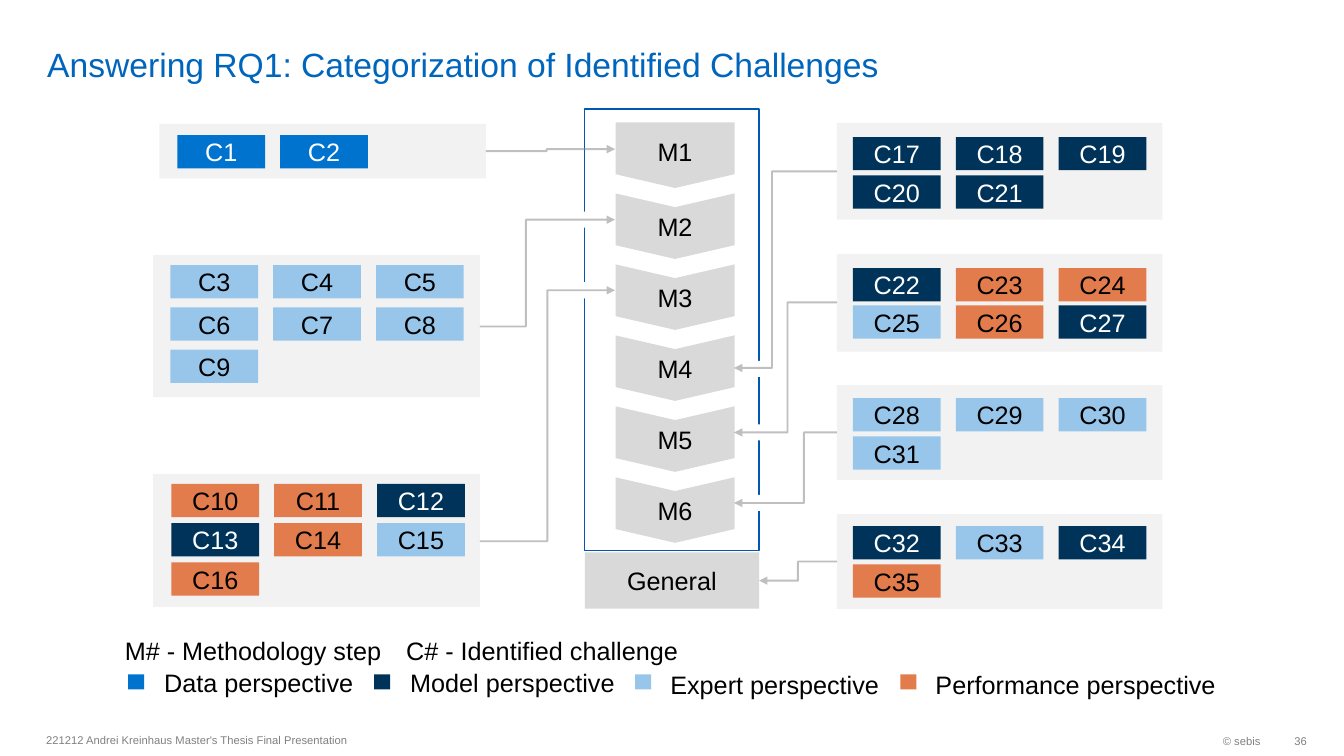
"""Build the slide that maps identified challenges to methodology steps."""
from dataclasses import dataclass

from lxml import etree
from pptx import Presentation
from pptx.dml.color import RGBColor
from pptx.enum.shapes import MSO_CONNECTOR, MSO_SHAPE
from pptx.enum.text import MSO_ANCHOR, PP_ALIGN
from pptx.oxml.ns import qn
from pptx.shapes.autoshape import Shape
from pptx.slide import Slide
from pptx.text.text import TextFrame
from pptx.util import Inches, Pt

RECT, PENTAGON, CHEVRON = MSO_SHAPE.RECTANGLE, MSO_SHAPE.PENTAGON, MSO_SHAPE.CHEVRON
ELBOW = MSO_CONNECTOR.ELBOW
LEFT, CENTER, RIGHT = PP_ALIGN.LEFT, PP_ALIGN.CENTER, PP_ALIGN.RIGHT
TOP, MIDDLE, BOTTOM = MSO_ANCHOR.TOP, MSO_ANCHOR.MIDDLE, MSO_ANCHOR.BOTTOM

WHITE = RGBColor(0xFF, 0xFF, 0xFF)
BLACK = RGBColor(0x00, 0x00, 0x00)
TITLE_BLUE = RGBColor(0x00, 0x65, 0xBD)
FRAME_BLUE = RGBColor(0x00, 0x58, 0xB2)
GRAY = RGBColor(0x80, 0x80, 0x80)
STEP_GRAY = RGBColor(0xD9, 0xD9, 0xD9)
PANEL_GRAY = RGBColor(0xF2, 0xF2, 0xF2)
BLUE = RGBColor(0x00, 0x73, 0xCF)
NAVY = RGBColor(0x00, 0x33, 0x59)
SKY = RGBColor(0x98, 0xC6, 0xEA)
ORANGE = RGBColor(0xE3, 0x7C, 0x4D)

FONT = "Arial"
CHIP_W, CHIP_H, CHIP_PITCH, COLUMNS = 0.87, 0.33, 1.02, 3
STEP_W, STEP_H, STEP_COUNT = 0.65, 1.18, 6
FIRST_STEP_TOP, LAST_STEP_TOP = 0.95, 4.47


@dataclass(frozen=True)
class Perspective:
    fill: RGBColor
    color: RGBColor


@dataclass(frozen=True)
class Panel:
    left: float
    top: float
    width: float
    height: float
    chip_left: float
    chip_top: float
    row_pitch: float
    first: int
    codes: str


@dataclass(frozen=True)
class Link:
    x1: float
    y1: float
    x2: float
    y2: float
    bend: float


@dataclass(frozen=True)
class Label:
    text: str
    left: float
    top: float
    width: float
    height: float = 0.38
    size: int = 18
    color: RGBColor = BLACK
    align: PP_ALIGN = LEFT
    anchor: MSO_ANCHOR = TOP
    wrap: bool = False
    inset: float = 0.05


PERSPECTIVES = {
    "D": Perspective(BLUE, WHITE),
    "M": Perspective(NAVY, WHITE),
    "E": Perspective(SKY, BLACK),
    "P": Perspective(ORANGE, BLACK),
}
PANELS = [
    Panel(1.58, 1.23, 3.24, 0.54, 1.76, 1.34, 0, 1, "DD"),
    Panel(1.52, 2.53, 3.24, 1.41, 1.69, 2.63, 0.42, 3, "EEEEEEE"),
    Panel(1.52, 4.7, 3.24, 1.32, 1.7, 4.8, 0.39, 10, "PPMMPEP"),
    Panel(8.3, 1.22, 3.23, 0.96, 8.46, 1.36, 0.38, 17, "MMMMM"),
    Panel(8.3, 2.52, 3.23, 0.97, 8.46, 2.66, 0.37, 22, "MPPEPM"),
    Panel(8.3, 3.82, 3.23, 0.94, 8.46, 3.95, 0.38, 28, "EEEE"),
    Panel(8.3, 5.1, 3.23, 0.94, 8.46, 5.22, 0.38, 32, "MEMP"),
]
LINKS = [
    Link(4.82, 1.5, 6.1, 1.48, 0.47),
    Link(4.76, 3.24, 6.1, 2.18, 0.34),
    Link(4.76, 5.37, 6.1, 2.88, 0.5),
    Link(8.3, 1.7, 7.28, 3.65, 0.63),
    Link(8.3, 3, 7.28, 4.29, 0.48),
    Link(8.3, 4.29, 7.28, 4.99, 0.32),
    Link(8.3, 5.57, 7.53, 5.76, 0.5),
]
FRAME_GAPS = [(5.72, 2.1), (5.72, 2.8), (7.45, 3.58), (7.45, 4.21), (7.45, 4.91)]
LEGEND_MARKS = {"D": 1.27, "M": 3.71, "E": 6.3, "P": 8.93}
LABELS = [
    Label("Answering RQ1: Categorization of Identified Challenges", 0.37, 0.05, 11.58, 0.79,
          24, TITLE_BLUE, LEFT, BOTTOM, True, 0),
    Label("© sebis", 10.26, 7.19, 2.34, 0.32, 8, GRAY, RIGHT, MIDDLE, True),
    Label("221212 Andrei Kreinhaus Master's Thesis Final Presentation", 0.36, 7.18, 6.3, 0.32,
          8, GRAY, LEFT, MIDDLE, True),
    Label("36", 12.6, 7.19, 0.46, 0.32, 8, GRAY, RIGHT, MIDDLE, True),
    Label("M# - Methodology step", 1.14, 6.25, 2.77),
    Label("C# - Identified challenge", 3.93, 6.25, 2.92),
    Label("Data perspective", 1.53, 6.57, 2.1),
    Label("Model perspective", 3.97, 6.57, 2.25),
    Label("Expert perspective", 6.55, 6.59, 2.29),
    Label("Performance perspective", 9.18, 6.59, 3.01),
]


def write(tf: TextFrame, text: str, size: int, color: RGBColor, align: PP_ALIGN) -> None:
    p = tf.paragraphs[0]
    p.alignment = align
    r = p.add_run()
    r.text = text
    r.font.name, r.font.size, r.font.color.rgb = FONT, Pt(size), color


def add_box(s: Slide, left: float, top: float, width: float, height: float, fill: RGBColor,
            text: str = "", color: RGBColor = BLACK, kind: MSO_SHAPE = RECT) -> Shape:
    sp = s.shapes.add_shape(kind, Inches(left), Inches(top), Inches(width), Inches(height))
    sp.shadow.inherit = False
    sp.fill.solid()
    sp.fill.fore_color.rgb = fill
    sp.line.fill.background()
    if text:
        sp.text_frame.vertical_anchor = MIDDLE
        write(sp.text_frame, text, 18, color, CENTER)
    return sp


def add_label(s: Slide, label: Label) -> None:
    sp = s.shapes.add_textbox(Inches(label.left), Inches(label.top),
                              Inches(label.width), Inches(label.height))
    tf = sp.text_frame
    tf.word_wrap = label.wrap
    tf.vertical_anchor = label.anchor
    tf.margin_top = tf.margin_bottom = Inches(label.inset)
    write(tf, label.text, label.size, label.color, label.align)


def add_steps(s: Slide) -> None:
    pitch = (LAST_STEP_TOP - FIRST_STEP_TOP) / (STEP_COUNT - 1)
    for i in range(STEP_COUNT):
        sp = add_box(s, 6.37, FIRST_STEP_TOP + i * pitch, STEP_W, STEP_H, STEP_GRAY,
                     f"M{i + 1}", kind=CHEVRON if i else PENTAGON)
        sp.adjustments[0] = 0.21
        sp.rotation = 90
        sp.text_frame._txBody.bodyPr.set("vert", "vert270")


def add_panel(s: Slide, panel: Panel) -> None:
    add_box(s, panel.left, panel.top, panel.width, panel.height, PANEL_GRAY)
    for i, code in enumerate(panel.codes):
        row, column = divmod(i, COLUMNS)
        look = PERSPECTIVES[code]
        add_box(s, panel.chip_left + column * CHIP_PITCH, panel.chip_top + row * panel.row_pitch,
                CHIP_W, CHIP_H, look.fill, f"C{panel.first + i}", look.color)


def add_link(s: Slide, link: Link) -> None:
    cx = s.shapes.add_connector(ELBOW, Inches(link.x1), Inches(link.y1),
                                Inches(link.x2), Inches(link.y2))
    cx.line.color.rgb = GRAY
    cx.line.width = Pt(1.35)
    sp_pr = cx._element.spPr
    guides = sp_pr.find(qn("a:prstGeom")).get_or_add_avLst()
    etree.SubElement(guides, qn("a:gd"), name="adj1", fmla=f"val {round(link.bend * 100000)}")
    ln = sp_pr.find(qn("a:ln"))
    etree.SubElement(ln.find(".//" + qn("a:srgbClr")), qn("a:alpha"), val="50000")
    etree.SubElement(ln, qn("a:tailEnd"), type="triangle")
    etree.SubElement(sp_pr, qn("a:effectLst"))


def main() -> None:
    prs = Presentation()
    prs.slide_width, prs.slide_height = Inches(13.33), Inches(7.5)
    s = prs.slides.add_slide(prs.slide_layouts[6])
    frame = add_box(s, 5.8, 1.08, 1.73, 4.38, WHITE)
    frame.fill.background()
    frame.line.color.rgb = FRAME_BLUE
    frame.line.width = Pt(1)
    for left, top in FRAME_GAPS:
        add_box(s, left, top, 0.17, 0.16, WHITE)
    add_steps(s)
    add_box(s, 5.8, 5.48, 1.73, 0.56, STEP_GRAY, "General")
    for panel in PANELS:
        add_panel(s, panel)
    for link in LINKS:
        add_link(s, link)
    for code, left in LEGEND_MARKS.items():
        add_box(s, left, 6.69, 0.16, 0.15, PERSPECTIVES[code].fill)
    for label in LABELS:
        add_label(s, label)
    prs.save("out.pptx")


if __name__ == "__main__":
    main()
